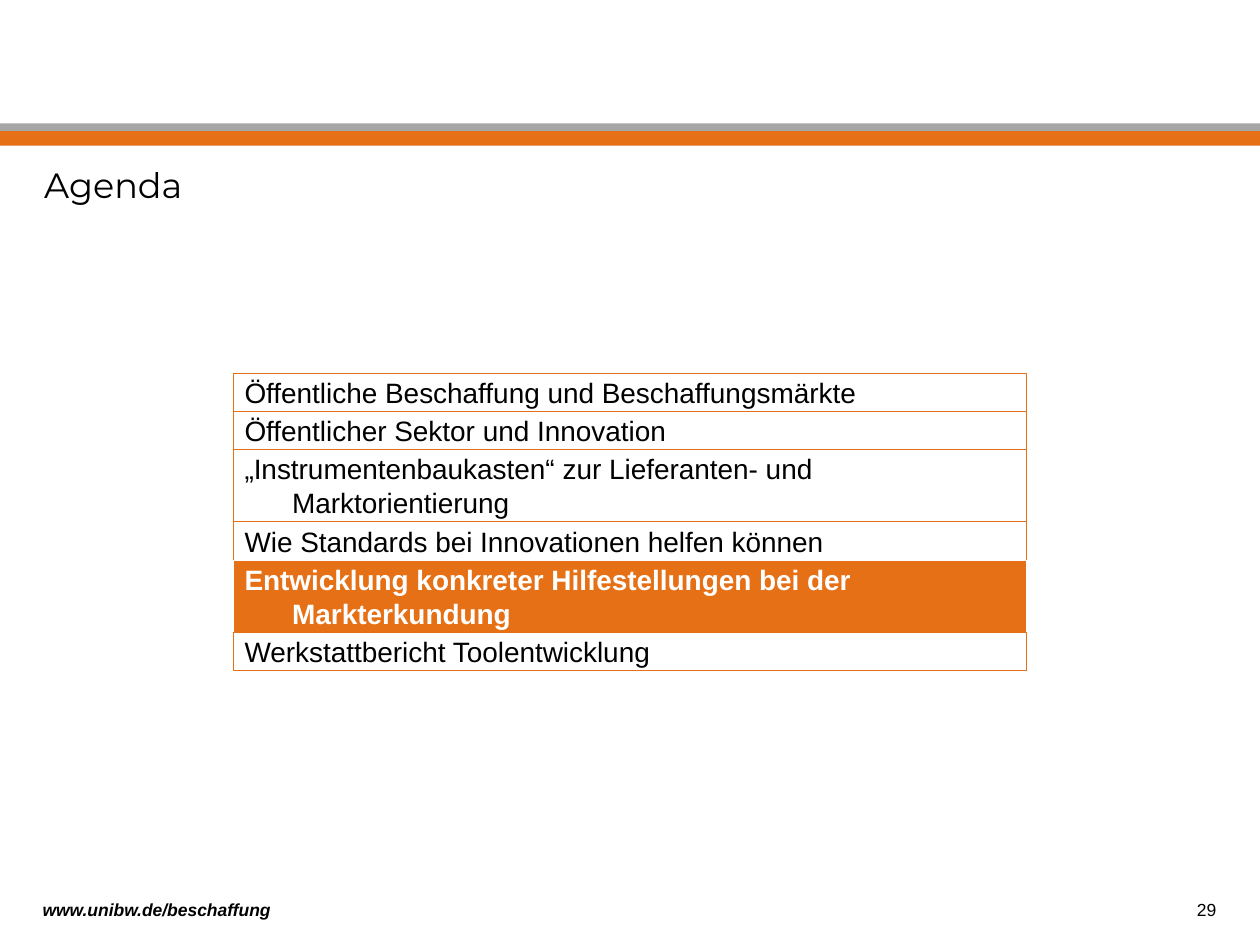
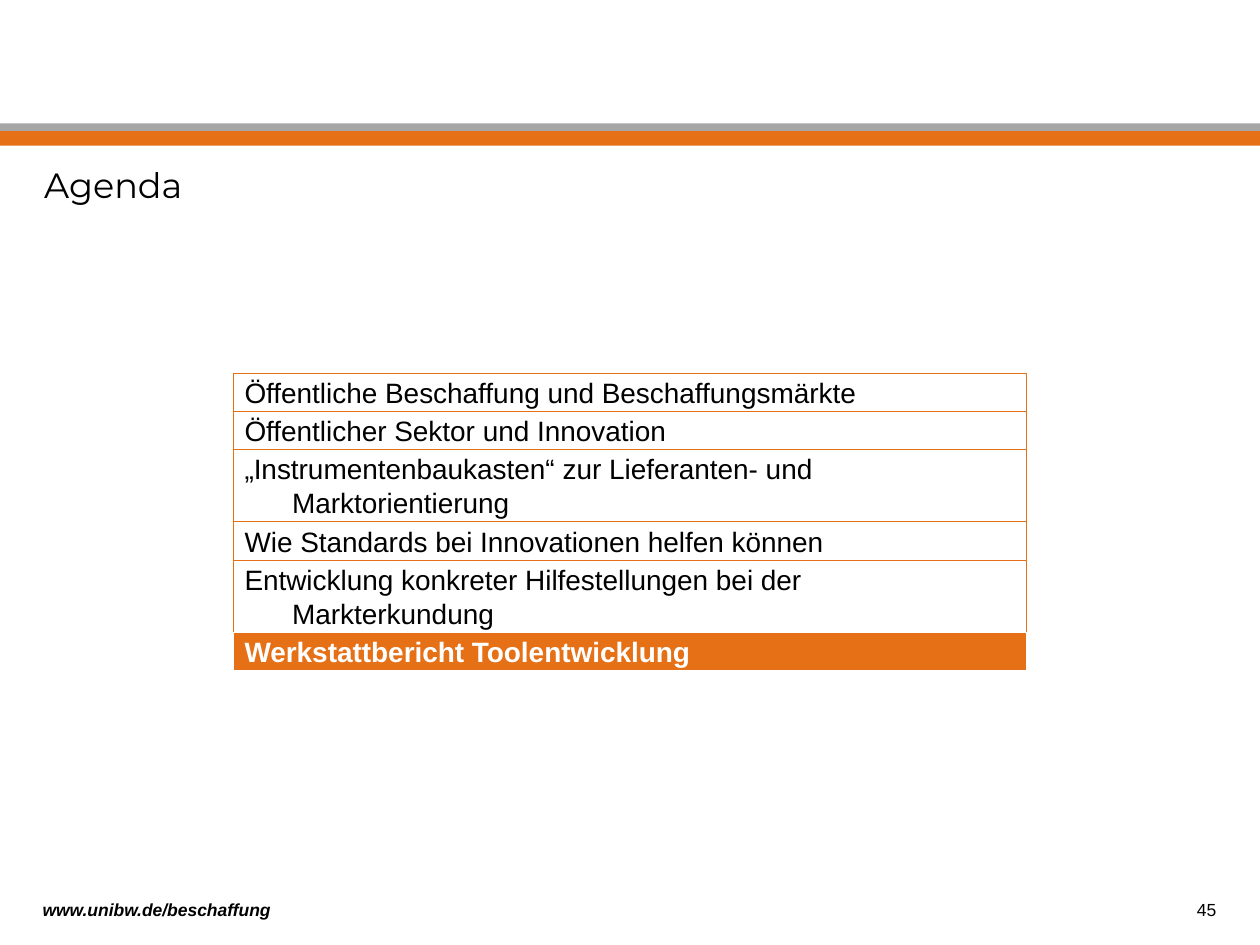
from pptx import Presentation
from pptx import util as u
from pptx.dml.color import RGBColor
from pptx.enum import shapes, text

COLORS = {"orange": "E67015", "gray": "A6A6A6", "white": "FFFFFF", "black": "000000"}
WIDTH, HEIGHT = 25.4, 19.05
AGENDA = [
    ("Öffentliche Beschaffung und Beschaffungsmärkte", 1),
    ("Öffentlicher Sektor und Innovation", 1),
    ("„Instrumentenbaukasten“ zur Lieferanten- und Marktorientierung", 2),
    ("Wie Standards bei Innovationen helfen können", 1),
    ("Entwicklung konkreter Hilfestellungen bei der Markterkundung", 2),
    ("Werkstattbericht Toolentwicklung", 1),
]
ROW_HEIGHTS = {1: 0.77, 2: 1.46}
ROW_LEFT, ROW_TOP, ROW_WIDTH = 4.7, 7.52, 16
HANGING = u.Cm(0.96)
SLIDES = [("29", 4), ("45", 5)]

TITLE = {"name": "Montserrat", "size": u.Pt(20)}
FOOTER = {"name": "Arial", "size": u.Pt(10)}
ADDRESS = FOOTER | {"bold": True, "italic": True}
ITEM = {"name": "Arial", "size": u.Pt(16)}

FOOTER_FRAME = {"vertical_anchor": text.MSO_ANCHOR.BOTTOM, "margin_bottom": u.Cm(0.08)}
ITEM_FRAME = {
    "vertical_anchor": text.MSO_ANCHOR.MIDDLE,
    "margin_left": u.Cm(0.23),
    "margin_right": u.Cm(0.4),
    "margin_top": u.Cm(0.05),
    "margin_bottom": u.Cm(0.05),
}


def add_rectangle(page, area, fill, line=None):
    box = page.shapes.add_shape(shapes.MSO_SHAPE.RECTANGLE, *map(u.Cm, area))
    box.shadow.inherit = False
    box.fill.solid()
    box.fill.fore_color.rgb = RGBColor.from_string(COLORS[fill])
    if line:
        box.line.color.rgb = RGBColor.from_string(COLORS[line])
        box.line.width = u.Pt(0.5)
    else:
        box.line.fill.background()
    return box


def write(box, words, font, frame, color="black", align=text.PP_ALIGN.LEFT):
    box.text_frame.word_wrap = True
    for name, value in frame.items():
        setattr(box.text_frame, name, value)
    para = box.text_frame.paragraphs[0]
    para.alignment = align
    span = para.add_run()
    span.text = words
    for name, value in font.items():
        setattr(span.font, name, value)
    span.font.color.rgb = RGBColor.from_string(COLORS[color])
    return para


deck = Presentation()
deck.slide_width, deck.slide_height = u.Cm(WIDTH), u.Cm(HEIGHT)

for number, current in SLIDES:
    page = deck.slides.add_slide(deck.slide_layouts[6])
    add_rectangle(page, (0, 2.64, WIDTH, 0.3), "orange")
    add_rectangle(page, (0, 2.49, WIDTH, 0.15), "gray")

    for words, area, font, frame, align in [
        ("www.unibw.de/beschaffung", (0.61, 17.15, 7.5, 1.47), ADDRESS, FOOTER_FRAME, text.PP_ALIGN.LEFT),
        (number, (9.3, 17.15, 15.47, 1.47), FOOTER, FOOTER_FRAME, text.PP_ALIGN.RIGHT),
        ("Agenda", (0.64, 3.18, 24.94, 2.11), TITLE, {}, text.PP_ALIGN.LEFT),
    ]:
        box = page.shapes.add_textbox(*map(u.Cm, area))
        write(box, words, font, frame, align=align)

    top = ROW_TOP
    for index, (words, lines) in enumerate(AGENDA):
        active = index == current
        fill, line, color = ("orange", "white", "white") if active else ("white", "orange", "black")
        height = ROW_HEIGHTS[lines]
        box = add_rectangle(page, (ROW_LEFT, top, ROW_WIDTH, height), fill, line)
        para = write(box, words, ITEM | {"bold": active}, ITEM_FRAME, color)
        indents = para._p.get_or_add_pPr()
        indents.set("marL", str(HANGING))
        indents.set("indent", str(-HANGING))
        top += height

deck.save("out.pptx")
